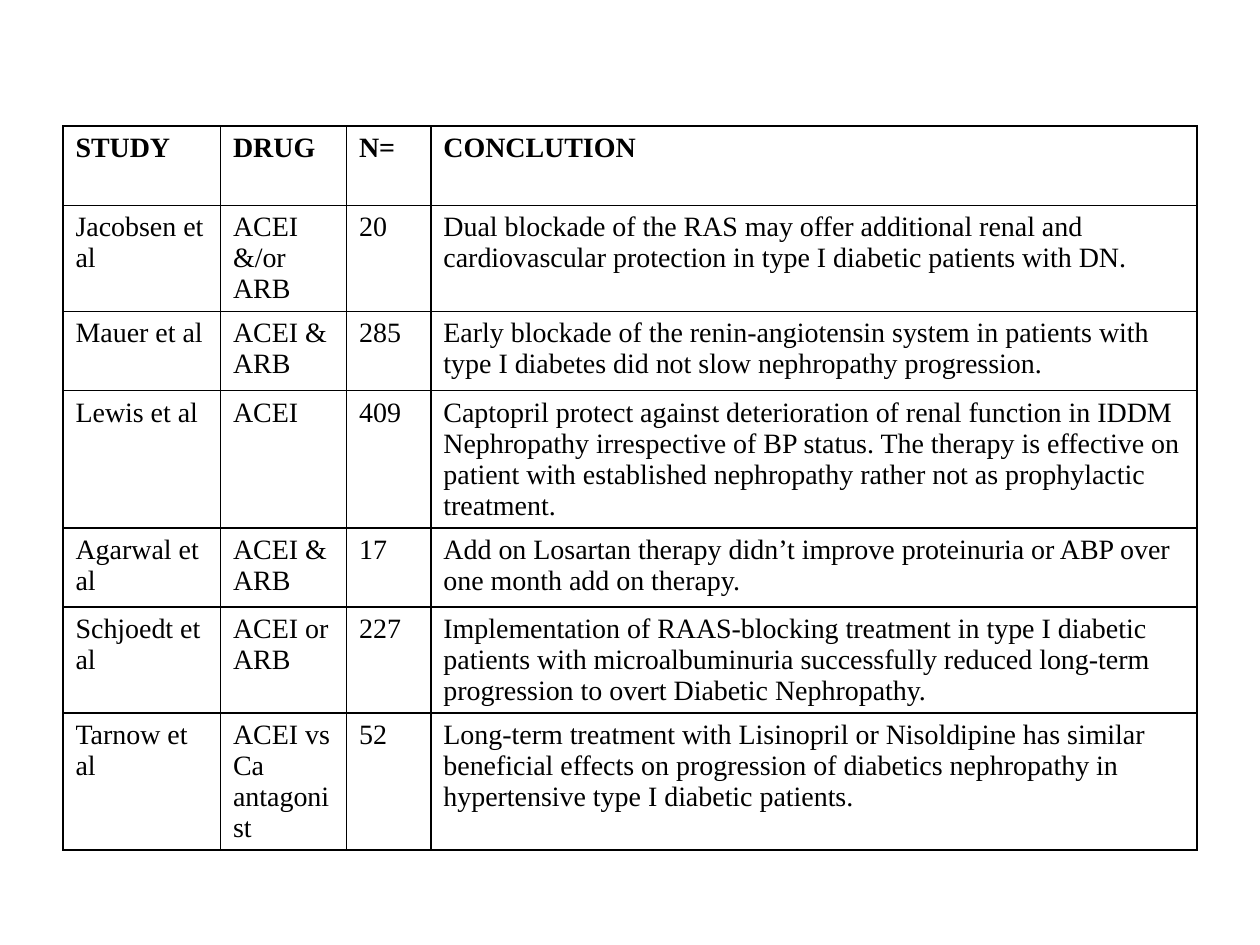
from pptx import Presentation
from pptx.dml.color import RGBColor
from pptx.oxml.ns import qn
from pptx.util import Inches, Pt
from lxml.etree import SubElement

COLORS = {"ink": "000000"}
FONT = "Times New Roman"


def write(cell, text, size=16, bold=False, color="ink"):
    """Fill a cell, one paragraph for each line of the text."""
    cell.text = text
    for paragraph in cell.text_frame.paragraphs:
        font = paragraph.runs[0].font
        font.name, font.size, font.bold = FONT, Pt(size), bold
        font.color.rgb = RGBColor.from_string(COLORS[color])


def add_borders(cell, width=1, color="ink"):
    """Draw the four sides of a cell, then leave its inside unfilled."""
    props = cell._tc.get_or_add_tcPr()
    for side in ("a:lnL", "a:lnR", "a:lnT", "a:lnB"):
        line = SubElement(props, qn(side), w=str(Pt(width)))
        fill = SubElement(line, qn("a:solidFill"))
        SubElement(fill, qn("a:srgbClr"), val=COLORS[color])
    cell.fill.background()


prs = Presentation()
prs.slide_width, prs.slide_height = Inches(10), Inches(7.5)
slide = prs.slides.add_slide(prs.slide_layouts[6])

# Studies and their findings
studies = [
    ("STUDY", "DRUG", "N=", "CONCLUTION"),
    ("Jacobsen et al", "ACEI &/or ARB", "20",
     "Dual blockade of the RAS may offer additional renal and cardiovascular "
     "protection in type I diabetic patients with DN."),
    ("Mauer et al", "ACEI & ARB", "285",
     "Early blockade of the renin-angiotensin system in patients with type I "
     "diabetes did not slow nephropathy progression."),
    ("Lewis et al", "ACEI", "409",
     "Captopril protect against deterioration of renal function in IDDM\n"
     "Nephropathy irrespective of BP status. The therapy is effective on patient "
     "with established nephropathy rather not as prophylactic treatment."),
    ("Agarwal et al", "ACEI & ARB", "17",
     "Add on Losartan therapy didn’t improve proteinuria or ABP over one month "
     "add on therapy."),
    ("Schjoedt et al", "ACEI or ARB", "227",
     "Implementation of RAAS-blocking treatment in type I diabetic patients with "
     "microalbuminuria successfully reduced long-term progression to overt "
     "Diabetic Nephropathy."),
    ("Tarnow et al", "ACEI vs Ca antagonist", "52",
     "Long-term treatment with Lisinopril or Nisoldipine has similar beneficial "
     "effects on progression of diabetics nephropathy in hypertensive type I "
     "diabetic patients."),
]

# Table grid: rows share one least height and grow with their text
column_widths = [1.25, 1, 0.67, 6.08]
row_height = 0.63
summary = slide.shapes.add_table(
    len(studies), len(column_widths), Inches(0.5), Inches(1),
    Inches(sum(column_widths)), Inches(row_height * len(studies))).table
summary.first_row = summary.horz_banding = False
for column, width in zip(summary.columns, column_widths):
    column.width = Inches(width)

# Cells, with a bold heading row
for r, study in enumerate(studies):
    summary.rows[r].height = Inches(row_height)
    for c, text in enumerate(study):
        write(summary.cell(r, c), text, bold=r == 0)
        add_borders(summary.cell(r, c))

prs.save("out.pptx")
